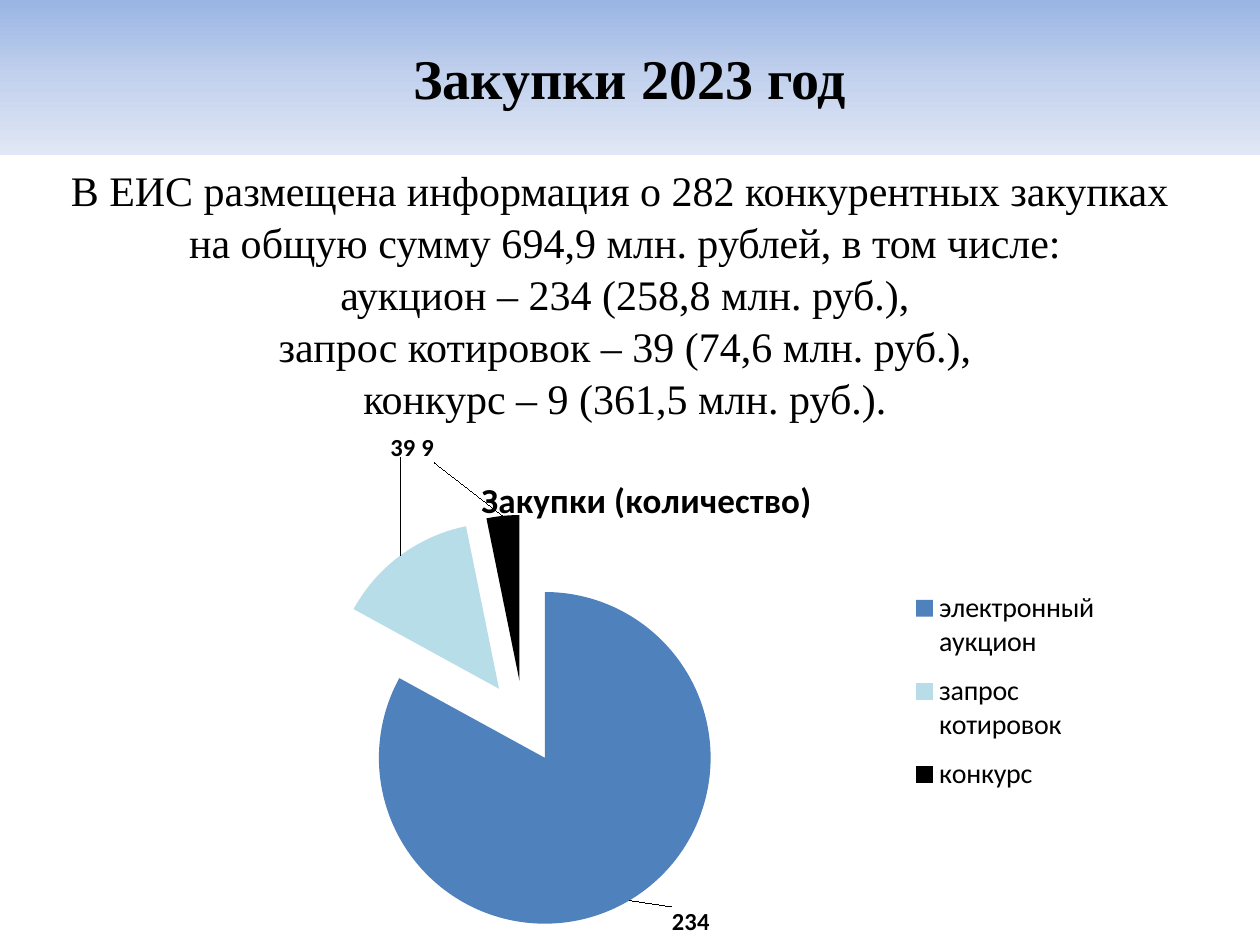
from lxml import etree
from pptx import Presentation
from pptx.chart.data import CategoryChartData
from pptx.dml.color import RGBColor
from pptx.enum.chart import XL_CHART_TYPE, XL_LABEL_POSITION, XL_LEGEND_POSITION
from pptx.enum.shapes import MSO_SHAPE
from pptx.enum.text import MSO_ANCHOR, PP_ALIGN
from pptx.oxml.ns import qn
from pptx.util import Pt

PX = 914400 / 126
COLORS = {
    "text": "000000",
    "band_top": "9AB5E4",
    "band_middle": "C2D1ED",
    "band_bottom": "E1E8F5",
    "auction": "4F81BD",
    "quotation": "B7DEE8",
    "contest": "000000",
}
HEADING = {"name": "Times New Roman", "size": Pt(32), "bold": True}
BODY = {"name": "Times New Roman", "size": Pt(24), "bold": False}
CHART_TITLE = {"name": "Calibri", "size": Pt(20), "bold": True}
LEGEND = {"name": "Calibri", "size": Pt(16), "bold": False}
LABEL = {"name": "Calibri", "size": Pt(14), "bold": True}


def style(font, look):
    for key, value in look.items():
        setattr(font, key, value)
    font.color.rgb = RGBColor.from_string(COLORS["text"])


def place(parent, index, **settings):
    """Give a chart part a manual layout, in fractions of the chart."""
    for old in parent.findall(qn("c:layout")):
        parent.remove(old)
    layout = etree.Element(qn("c:layout"))
    manual = etree.SubElement(layout, qn("c:manualLayout"))
    for key, value in settings.items():
        etree.SubElement(manual, qn(f"c:{key}")).set("val", str(value))
    parent.insert(index, layout)


prs = Presentation()
prs.slide_width, prs.slide_height = round(1260 * PX), round(945 * PX)
slide = prs.slides.add_slide(prs.slide_layouts[6])

# Heading band
band = slide.shapes.add_shape(MSO_SHAPE.RECTANGLE, 0, 0, prs.slide_width, round(155 * PX))
band.shadow.inherit = False
band.line.fill.background()
band.fill.gradient()
band.fill.gradient_angle = 270
stops = band.fill._fill._gradFill.find(qn("a:gsLst"))
for old_stop in list(stops):
    stops.remove(old_stop)
for position, name in ((0, "band_top"), (50, "band_middle"), (100, "band_bottom")):
    stop = etree.SubElement(stops, qn("a:gs"), pos=str(position * 1000))
    etree.SubElement(stop, qn("a:srgbClr"), val=COLORS[name])
band.text_frame.vertical_anchor = MSO_ANCHOR.MIDDLE
heading = band.text_frame.paragraphs[0]
heading.text = "Закупки 2023 год"
heading.alignment = PP_ALIGN.CENTER
style(heading.runs[0].font, HEADING)

# Summary lines
summary = slide.shapes.add_textbox(*(round(n * PX) for n in (25, 155, 1200, 764))).text_frame
summary.word_wrap = True
summary.margin_top = round(9 * PX)
summary.text = "\n".join((
    "В ЕИС размещена информация о 282 конкурентных закупках ",
    "на общую сумму 694,9 млн. рублей, в том числе:",
    "аукцион – 234 (258,8 млн. руб.),",
    "запрос котировок – 39 (74,6 млн. руб.),",
    "конкурс – 9 (361,5 млн. руб.).",
))
for line in summary.paragraphs:
    line.alignment = PP_ALIGN.CENTER
    line.space_before = Pt(1)
    style(line.runs[0].font, BODY)

# Purchases by procedure
purchases = CategoryChartData()
purchases.categories = ["электронный аукцион", "запрос котировок ", "конкурс "]
purchases.add_series("Закупки (количество)", (234, 39, 9))
chart = slide.shapes.add_chart(
    XL_CHART_TYPE.PIE, *(round(n * PX) for n in (154, 433, 973, 512)), purchases).chart
chart.font.name, chart.font.size = "Calibri", Pt(10)
chart.has_title = True
chart_title = chart.chart_title.text_frame
chart_title.text = "Закупки (количество)"
style(chart_title.paragraphs[0].runs[0].font, CHART_TITLE)
chart_area = chart._chartSpace.chart
place(chart_area.find(qn("c:title")), 1, xMode="edge", yMode="edge", x=0.33, y=0.07)
place(chart_area.plotArea, 0, layoutTarget="inner", xMode="edge", yMode="edge",
      x=0.06, y=0.16, w=0.64, h=0.81)

chart.has_legend = True
chart.legend.position = XL_LEGEND_POSITION.RIGHT
chart.legend.include_in_layout = False
style(chart.legend.font, LEGEND)
place(chart.legend._element, 1, xMode="edge", yMode="edge", x=0.77, y=0.28, w=0.21, h=0.45)

pie = chart.plots[0]
pie.vary_by_categories = True
slices = pie.series[0]
slices.data_labels.show_value = True
style(slices.data_labels.font, LABEL)
label_shifts = {"auction": (0.04, 0), "quotation": (0.02, -0.18), "contest": (-0.07, -0.09)}
for index, (name, (x, y)) in enumerate(label_shifts.items()):
    point = slices.points[index]
    point.format.fill.solid()
    point.format.fill.fore_color.rgb = RGBColor.from_string(COLORS[name])
    style(point.data_label.font, LABEL)
    point.data_label.position = XL_LABEL_POSITION.OUTSIDE_END
    place(slices._element.xpath(".//c:dLbl")[index], 1, x=x, y=y)
explosion = etree.Element(qn("c:explosion"), val="25")
slices._element.find(qn("c:dPt")).addprevious(explosion)

prs.save("out.pptx")
